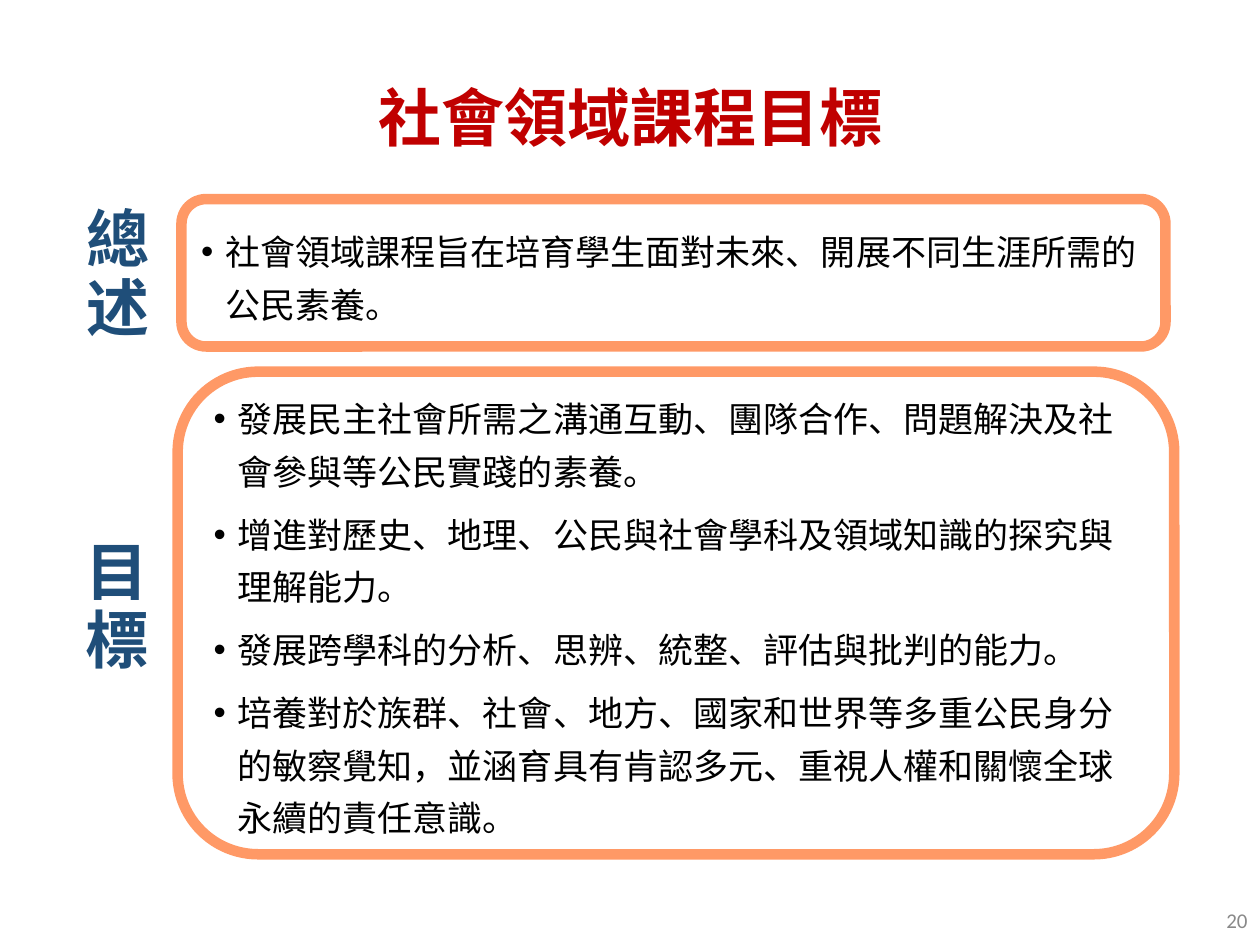
from dataclasses import dataclass

from lxml.etree import SubElement
from pptx import Presentation
from pptx.dml.color import RGBColor
from pptx.enum.shapes import MSO_SHAPE
from pptx.enum.text import MSO_ANCHOR, PP_ALIGN
from pptx.oxml.ns import qn
from pptx.util import Inches, Pt

COLORS = {"paper": "FFFFFF", "frame": "FF9966", "text": "000000",
          "title": "C00000", "label": "1F4E79", "number": "898989"}
CJK = "Noto Sans CJK SC"
FORMATS = {
    "title": {"size": Pt(36), "name": CJK, "bold": True},
    "label": {"size": Pt(36), "name": CJK, "bold": True},
    "text": {"size": Pt(20), "name": CJK, "bold": False},
    "number": {"size": Pt(12), "name": "Calibri", "bold": False},
}
BULLET_INDENT = Inches(0.19)


@dataclass
class Area:
    """A rectangle in percent of the slide's width and height."""
    left: float
    top: float
    width: float
    height: float

    def box(self) -> tuple:
        w, h = prs.slide_width / 100, prs.slide_height / 100
        return (int(self.left * w), int(self.top * h),
                int(self.width * w), int(self.height * h))


@dataclass
class Section:
    label: str
    label_area: Area
    frame_area: Area
    items: list


SECTIONS = [
    Section("目標", Area(4.7, 54.93, 9.1, 19.07), Area(14.1, 39.33, 79.1, 51.07), [
        "發展民主社會所需之溝通互動、團隊合作、問題解決及社會參與等公民實踐的素養。",
        "增進對歷史、地理、公民與社會學科及領域知識的探究與理解能力。",
        "發展跨學科的分析、思辨、統整、評估與批判的能力。",
        "培養對於族群、社會、地方、國家和世界等多重公民身分的敏察覺知，"
        "並涵育具有肯認多元、重視人權和關懷全球永續的責任意識。",
    ]),
    Section("總述", Area(4.8, 19.73, 9.1, 19.07), Area(14.4, 21.07, 78.1, 15.6), [
        "社會領域課程旨在培育學生面對未來、開展不同生涯所需的公民素養。",
    ]),
]


def rgb(key: str) -> RGBColor:
    return RGBColor.from_string(COLORS[key])


def write(p, text: str, style: str, align: PP_ALIGN) -> None:
    p.alignment = align
    r = p.add_run()
    r.text = text
    for name, value in FORMATS[style].items():
        setattr(r.font, name, value)
    r.font.color.rgb = rgb(style)
    # East Asian glyphs need their own typeface entry
    SubElement(r.font._element, qn("a:ea"), typeface=FORMATS[style]["name"])


def add_bullet(p) -> None:
    pPr = p._p.get_or_add_pPr()
    pPr.set("marL", str(BULLET_INDENT))
    pPr.set("indent", str(-BULLET_INDENT))
    SubElement(pPr, qn("a:buFont"), typeface="Arial")
    SubElement(pPr, qn("a:buChar"), char="•")


def add_frame(s, area: Area, items: list) -> None:
    sp = s.shapes.add_shape(MSO_SHAPE.FLOWCHART_ALTERNATE_PROCESS, *area.box())
    sp.shadow.inherit = False
    sp.fill.solid()
    sp.fill.fore_color.rgb = rgb("paper")
    sp.line.color.rgb = rgb("frame")
    sp.line.width = Pt(6)
    tf = sp.text_frame
    tf.word_wrap = True
    tf.vertical_anchor = MSO_ANCHOR.MIDDLE
    for i, item in enumerate(items):
        p = tf.add_paragraph() if i else tf.paragraphs[0]
        add_bullet(p)
        p.line_spacing = Pt(30)
        p.space_before = Pt(6 if i else 0)
        write(p, item, "text", PP_ALIGN.LEFT)


def add_text(s, area: Area, text: str, style: str, align: PP_ALIGN,
             margins: tuple = (0.1, 0.05), spacing: float = 1.0) -> None:
    tf = s.shapes.add_textbox(*area.box()).text_frame
    tf.word_wrap = True
    tf.vertical_anchor = MSO_ANCHOR.MIDDLE
    tf.margin_left = tf.margin_right = Inches(margins[0])
    tf.margin_top = tf.margin_bottom = Inches(margins[1])
    p = tf.paragraphs[0]
    p.line_spacing = spacing
    write(p, text, style, align)


prs = Presentation()
prs.slide_width, prs.slide_height = Inches(10), Inches(7.5)
s = prs.slides.add_slide(prs.slide_layouts[5])

# Title
title = s.shapes.title
title.left, title.top, title.width, title.height = Area(6.9, 2.67, 86.2, 19.33).box()
title.text_frame.vertical_anchor = MSO_ANCHOR.MIDDLE
write(title.text_frame.paragraphs[0], "社會領域課程目標", "title", PP_ALIGN.CENTER)

# Framed lists with their side labels
for section in SECTIONS:
    add_frame(s, section.frame_area, section.items)
    add_text(s, section.label_area, section.label, "label", PP_ALIGN.CENTER,
             margins=(0.15, 0.07), spacing=0.9)

# Slide number
add_text(s, Area(77.5, 94.67, 22.5, 5.33), "20", "number", PP_ALIGN.RIGHT)

prs.save("out.pptx")
